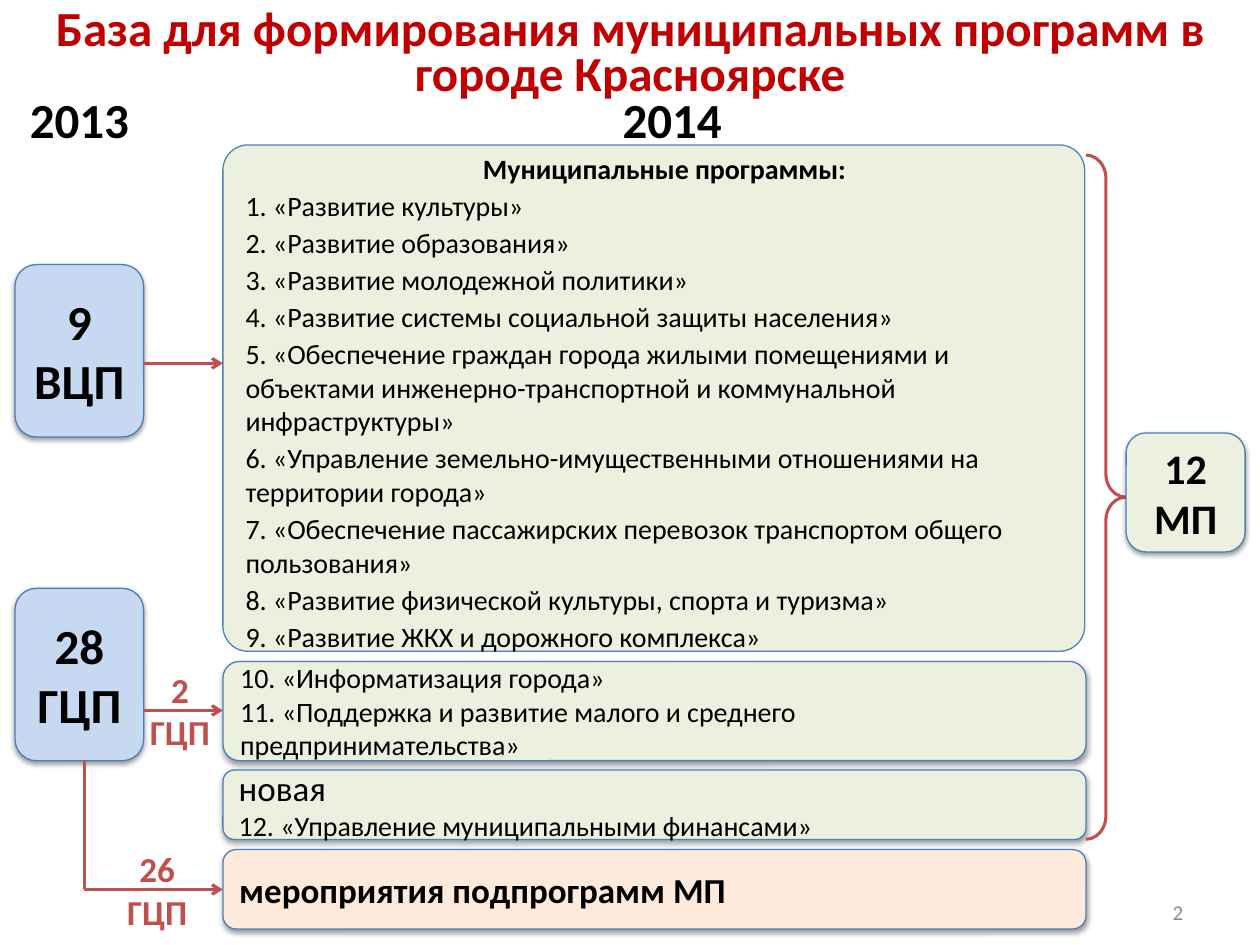
from dataclasses import dataclass

from lxml.etree import SubElement
from pptx import Presentation
from pptx.dml.color import RGBColor
from pptx.enum.shapes import MSO_CONNECTOR, MSO_SHAPE
from pptx.enum.text import MSO_ANCHOR, PP_ALIGN
from pptx.oxml.ns import qn
from pptx.util import Pt


@dataclass(frozen=True)
class Theme:
    font: str = "Calibri"
    title: str = "C00000"
    ink: str = "000000"
    accent: str = "C0504D"
    muted: str = "8C8C8C"
    border: str = "4B7EBC"
    panel_border: str = "4F81BD"
    source: str = "C6D9F1"
    program: str = "EBF1DE"
    activity: str = "FDEADA"
    heading_size: int = 28
    total_size: int = 24
    label_size: int = 20
    body_size: int = 16
    number_size: int = 12
    line_width: float = 1.75


THEME = Theme()
SOURCE_LEFT, SOURCE_WIDTH, SOURCE_HEIGHT = 8.6, 73.5, 98.6
SOURCE_RIGHT = SOURCE_LEFT + SOURCE_WIDTH
PROGRAM_LEFT, PROGRAM_WIDTH = 127.4, 493.2
BRANCH_X, BRANCH_Y = 48.2, 508.3

PROGRAMS = [
    "1. «Развитие культуры»",
    "2. «Развитие образования»",
    "3. «Развитие молодежной политики»",
    "4. «Развитие системы социальной защиты населения»",
    "5. «Обеспечение граждан города жилыми помещениями и объектами "
    "инженерно-транспортной и коммунальной инфраструктуры»",
    "6. «Управление земельно-имущественными отношениями на территории города»",
    "7. «Обеспечение пассажирских перевозок транспортом общего пользования»",
    "8. «Развитие физической культуры, спорта и туризма»",
    "9. «Развитие ЖКХ и дорожного комплекса»",
]


def color(value):
    return RGBColor.from_string(value)


def write(frame, lines, size, ink=THEME.ink, bold=False, align=PP_ALIGN.LEFT,
          anchor=MSO_ANCHOR.TOP, wrap=True):
    """Fill a text frame with one evenly formatted paragraph per line."""
    frame.word_wrap = wrap
    frame.vertical_anchor = anchor
    frame.text = "\n".join(lines)
    for paragraph in frame.paragraphs:
        paragraph.alignment = align
        font = paragraph.font
        font.name, font.size, font.bold = THEME.font, Pt(size), bold
        font.color.rgb = color(ink)


def add_title(slide, wording):
    title = slide.shapes.title
    title.left, title.top, title.width, title.height = Pt(0), Pt(3.6), Pt(720), Pt(57)
    write(title.text_frame, [wording], THEME.heading_size, THEME.title, True,
          PP_ALIGN.CENTER, MSO_ANCHOR.MIDDLE)
    title.text_frame.paragraphs[0].line_spacing = Pt(26)


def add_label(slide, box, lines, size, **style):
    label = slide.shapes.add_textbox(*map(Pt, box))
    write(label.text_frame, lines, size, **style)
    return label


def add_box(slide, box, fill, border=THEME.border):
    shape = slide.shapes.add_shape(MSO_SHAPE.ROUNDED_RECTANGLE, *map(Pt, box))
    shape.shadow.inherit = False
    shape.fill.solid()
    shape.fill.fore_color.rgb = color(fill)
    shape.line.color.rgb = color(border)
    shape.line.width = Pt(0.75)
    return shape


def add_card(slide, box, fill, lines, size, **style):
    """Add a box with a soft shadow below it and vertically centred text."""
    card = add_box(slide, box, fill)
    effects = card._element.spPr.find(qn("a:effectLst"))
    shadow = SubElement(effects, qn("a:outerShdw"), blurRad=str(Pt(3.1)),
                        dist=str(Pt(1.6)), dir="5400000", rotWithShape="0")
    shade = SubElement(shadow, qn("a:srgbClr"), val=THEME.ink)
    SubElement(shade, qn("a:alpha"), val="38000")
    write(card.text_frame, lines, size, anchor=MSO_ANCHOR.MIDDLE, **style)
    return card


def add_line(slide, start, end, arrow=True):
    line = slide.shapes.add_connector(MSO_CONNECTOR.STRAIGHT, *map(Pt, start + end))
    line.line.color.rgb = color(THEME.accent)
    line.line.width = Pt(THEME.line_width)
    if arrow:
        SubElement(line.line._get_or_add_ln(), qn("a:tailEnd"), type="arrow")
    SubElement(line._element.spPr, qn("a:effectLst"))


def add_brace(slide, box):
    brace = slide.shapes.add_shape(MSO_SHAPE.RIGHT_BRACE, *map(Pt, box))
    brace.shadow.inherit = False
    brace.adjustments[0] = 0.59
    brace.fill.background()
    brace.line.color.rgb = color(THEME.accent)
    brace.line.width = Pt(THEME.line_width)


def add_sources(slide):
    for top, wording in ((151.2, "9 ВЦП"), (336.2, "28 ГЦП")):
        source = add_card(slide, (SOURCE_LEFT, top, SOURCE_WIDTH, SOURCE_HEIGHT),
                          THEME.source, [wording], THEME.heading_size,
                          bold=True, align=PP_ALIGN.CENTER)
        source.text_frame.margin_left = source.text_frame.margin_right = Pt(6)


def add_program_list(slide):
    panel = add_box(slide, (PROGRAM_LEFT, 82.8, 492.5, 289.4), THEME.program,
                    THEME.panel_border)
    panel.adjustments[0] = 0.05
    listing = add_label(slide, (133.2, 82.8, PROGRAM_WIDTH, 289.4),
                        ["Муниципальные программы:"] + PROGRAMS, THEME.body_size)
    paragraphs = listing.text_frame.paragraphs
    for paragraph in paragraphs:
        paragraph.space_after = Pt(2)
    paragraphs[0].alignment = PP_ALIGN.CENTER
    paragraphs[0].font.bold = True


def add_program_cards(slide):
    def card(top, height, fill, lines, size, **style):
        return add_card(slide, (PROGRAM_LEFT, top, PROGRAM_WIDTH, height),
                        fill, lines, size, **style)

    card(378, 56.7, THEME.program,
         ["10. «Информатизация города»",
          "11. «Поддержка и развитие малого и среднего предпринимательства»"],
         THEME.body_size)
    new = card(440, 39.7, THEME.program,
               ["новая", "12. «Управление муниципальными финансами»"], THEME.body_size)
    new.text_frame.paragraphs[0].font.size = Pt(THEME.label_size)
    card(485.5, 45.4, THEME.activity, ["мероприятия подпрограмм МП"],
         THEME.label_size, bold=True)


def add_flows(slide):
    for y in (207.6, 406):
        add_line(slide, (SOURCE_RIGHT, y), (PROGRAM_LEFT, y))
    add_line(slide, (BRANCH_X, 434.8), (BRANCH_X, BRANCH_Y), arrow=False)
    add_line(slide, (BRANCH_X, BRANCH_Y), (PROGRAM_LEFT, BRANCH_Y))
    for left, top, count in ((78.3, 378.6, "2"), (65.3, 481, "26")):
        add_label(slide, (left, top, 49, 55.7), [count, "ГЦП"], THEME.label_size,
                  ink=THEME.accent, bold=True, align=PP_ALIGN.CENTER, wrap=False)


def main():
    deck = Presentation()
    deck.slide_width, deck.slide_height = Pt(720), Pt(540)
    slide = deck.slides.add_slide(deck.slide_layouts[5])

    add_title(slide, "База для формирования муниципальных программ в городе Красноярске")
    for left, year in ((10, "2013"), (348.7, "2014")):
        add_label(slide, (left, 47.6, 72, 41.2), [year], THEME.heading_size,
                  bold=True, wrap=False)
    add_sources(slide)
    add_program_cards(slide)
    add_program_list(slide)
    add_flows(slide)
    add_brace(slide, (620.6, 88.6, 22.7, 391))
    add_card(slide, (643.5, 247.4, 68, 68), THEME.program, ["12", "МП"],
             THEME.total_size, bold=True, align=PP_ALIGN.CENTER)
    add_label(slide, (643, 506.2, 40.3, 30.2), ["2"], THEME.number_size,
              ink=THEME.muted, align=PP_ALIGN.RIGHT, anchor=MSO_ANCHOR.MIDDLE)

    deck.save("out.pptx")


if __name__ == "__main__":
    main()
